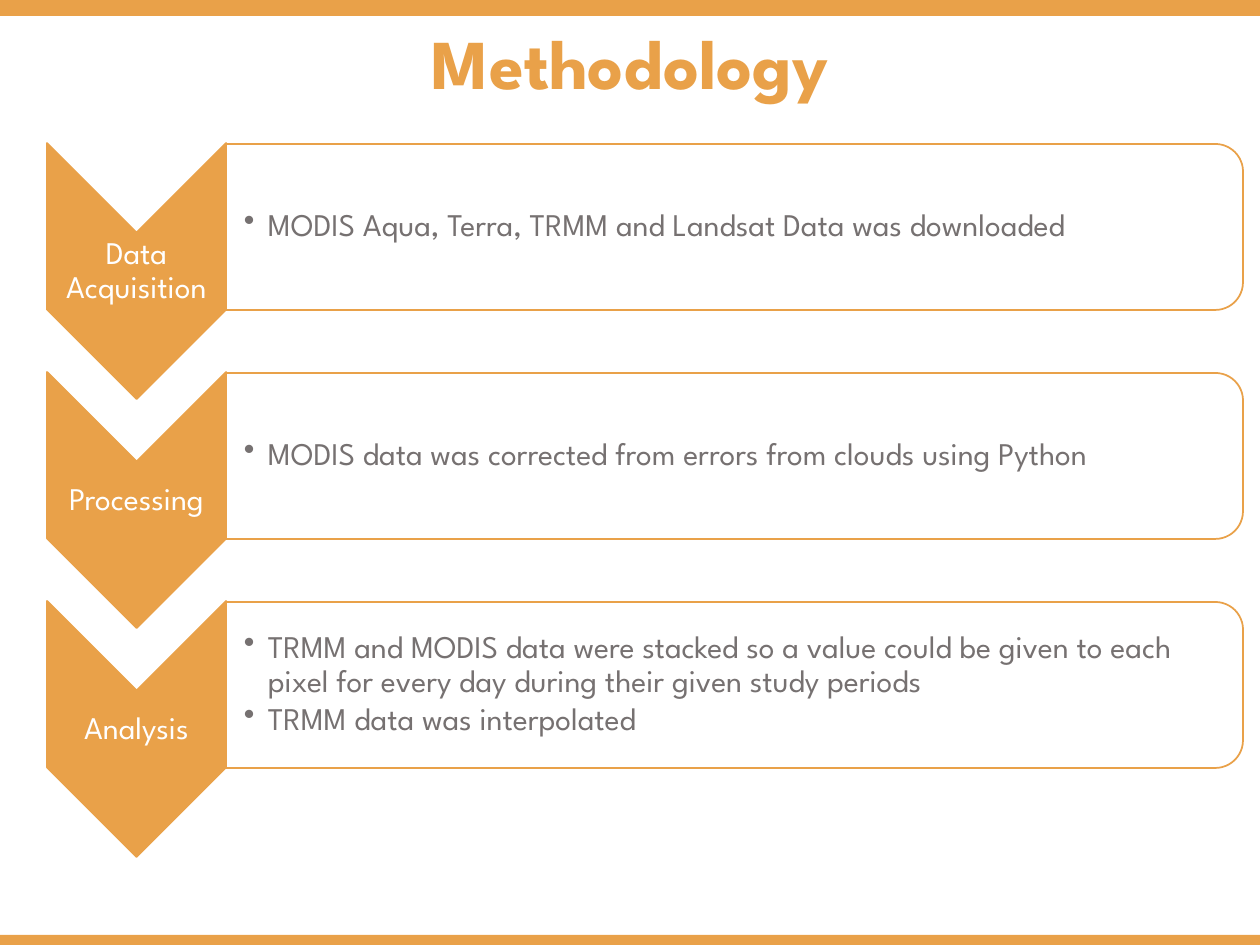
from lxml.etree import SubElement
from pptx import Presentation
from pptx.dml.color import RGBColor
from pptx.enum.shapes import MSO_SHAPE
from pptx.enum.text import MSO_ANCHOR, MSO_AUTO_SIZE, PP_ALIGN
from pptx.oxml.ns import qn
from pptx.util import Emu, Pt

FONT = "League Spartan"
ORANGE = "E9A149"
WHITE = "FFFFFF"
GREY = "767171"
STEP_PITCH = 229

STEPS = [
    ("Data Acquisition", ["MODIS Aqua, Terra, TRMM and Landsat Data was downloaded"]),
    ("Processing", ["MODIS data was corrected from errors from clouds using Python"]),
    ("Analysis", [
        "TRMM and MODIS data were stacked so a value could be given to each "
        "pixel for every day during their given study periods",
        "TRMM data was interpolated",
    ]),
]


def px(length):
    return Emu(round(length * 914400 / 126))


def color(hex_code):
    return RGBColor.from_string(hex_code)


def add_block(slide, preset, left, top, width, height, fill, turned=False):
    if turned:
        left, top = left + (width - height) / 2, top + (height - width) / 2
        width, height = height, width
    block = slide.shapes.add_shape(preset, px(left), px(top), px(width), px(height))
    block.rotation = 90 if turned else 0
    block.shadow.inherit = False
    block.fill.solid()
    block.fill.fore_color.rgb = color(fill)
    block.line.color.rgb = color(ORANGE)
    block.line.width = Pt(1)
    return block


def add_words(paragraph, words, size, hex_code, bold=False):
    paragraph.line_spacing = 0.9
    run = paragraph.add_run()
    run.text = words
    run.font.name = FONT
    run.font.size = Pt(size)
    run.font.bold = bold
    run.font.color.rgb = color(hex_code)


def add_text_frame(slide, left, top, width, height, left_inset=1):
    frame = slide.shapes.add_textbox(px(left), px(top), px(width), px(height)).text_frame
    frame.word_wrap = True
    frame.vertical_anchor = MSO_ANCHOR.MIDDLE
    frame.margin_left = px(left_inset)
    frame.margin_top = frame.margin_right = frame.margin_bottom = px(1)
    return frame


def add_bullet(paragraph):
    properties = paragraph._p.get_or_add_pPr()
    properties.set("marL", str(px(24)))
    properties.set("indent", str(px(-24)))
    SubElement(properties, qn("a:buChar")).set("char", "•")


def add_bars(slide, width, height):
    for top, thickness in ((0, 16), (height - 10, 10)):
        bar = add_block(slide, MSO_SHAPE.RECTANGLE, 0, top, width, thickness, ORANGE)
        bar.line.fill.background()


def add_title(slide, left, top, width, height):
    title = slide.shapes.title
    title.left, title.top, title.width, title.height = map(px, (left, top, width, height))
    frame = title.text_frame
    frame.auto_size = MSO_AUTO_SIZE.NONE
    frame.vertical_anchor = MSO_ANCHOR.BOTTOM
    heading = frame.paragraphs[0]
    heading.alignment = PP_ALIGN.CENTER
    heading.space_before = Pt(10)
    add_words(heading, "Methodology", 40, ORANGE, bold=True)


def add_step(slide, left, top, name, details):
    add_block(slide, MSO_SHAPE.CHEVRON, left, top, 179, 256, ORANGE, turned=True)
    label = add_text_frame(slide, left, top + 90, 179, 77).paragraphs[0]
    label.alignment = PP_ALIGN.CENTER
    add_words(label, name, 18, WHITE)

    panel_left = left + 179
    panel = add_block(slide, MSO_SHAPE.ROUND_2_SAME_RECTANGLE,
                      panel_left, top + 1, 1017, 166, WHITE, turned=True)
    panel_white = panel.fill._xPr.find(qn("a:solidFill"))[0]
    SubElement(panel_white, qn("a:alpha")).set("val", "90000")

    frame = add_text_frame(slide, panel_left, top + 8, 1008, 150, left_inset=18)
    for index, detail in enumerate(details):
        paragraph = frame.add_paragraph() if index else frame.paragraphs[0]
        paragraph.space_after = Pt(2)
        add_words(paragraph, detail, 18, GREY)
        add_bullet(paragraph)


def main():
    presentation = Presentation()
    presentation.slide_width, presentation.slide_height = px(1260), px(945)
    slide = presentation.slides.add_slide(presentation.slide_layouts[5])
    add_bars(slide, 1260, 945)
    add_title(slide, 0, 15, 1260, 96)
    for index, (name, details) in enumerate(STEPS):
        add_step(slide, 47, 143 + index * STEP_PITCH, name, details)
    presentation.save("out.pptx")


if __name__ == "__main__":
    main()
